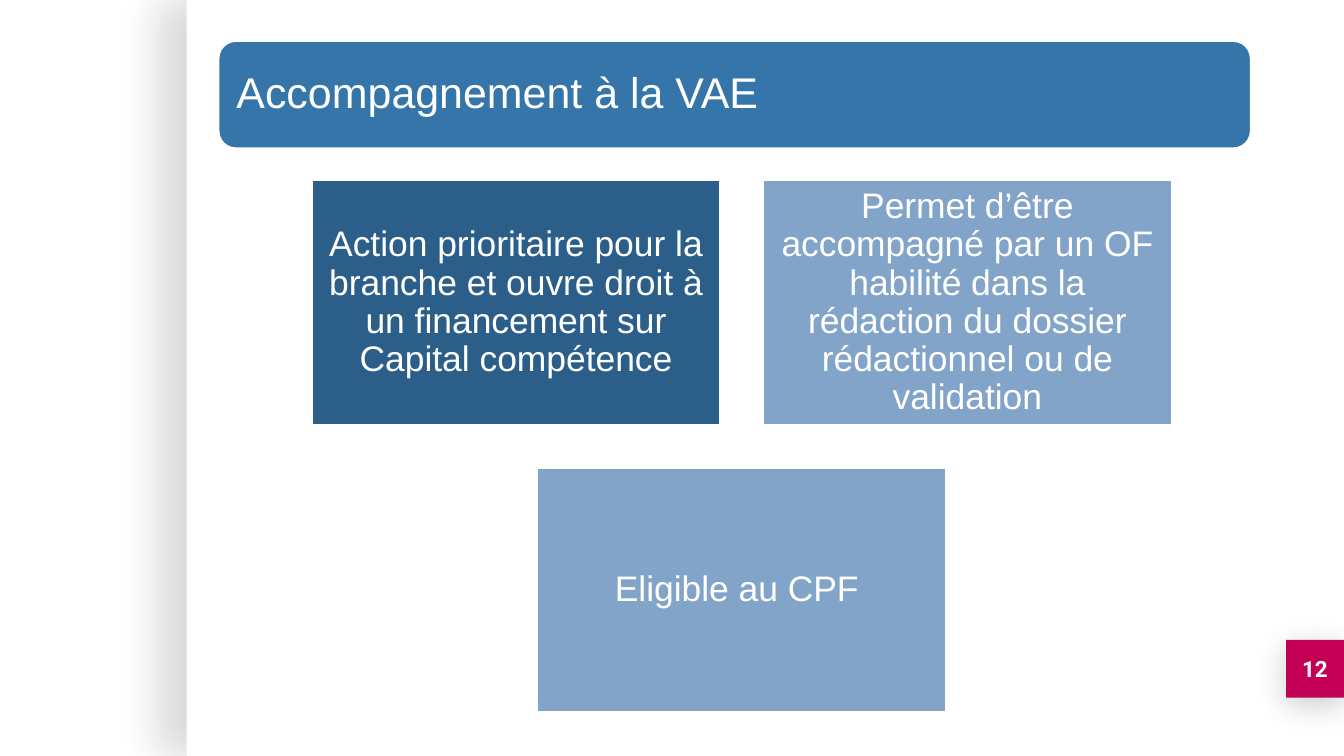
import pptx
import pptx.util
import pptx.dml.color
import pptx.enum.shapes
import pptx.enum.text
import pptx.oxml
import pptx.oxml.ns
from dataclasses import dataclass

Pt = pptx.util.Pt
Kind = pptx.enum.shapes.MSO_SHAPE
Align = pptx.enum.text.PP_ALIGN


@dataclass(frozen=True)
class Theme:
    """Colours, fonts and type sizes of the slide."""
    white: str = "FFFFFF"
    black: str = "000000"
    blue: str = "3575A9"
    dark: str = "2B5F8A"
    light: str = "83A4C9"
    pink: str = "C40056"
    sans: str = "Arial"
    digit: str = "Roboto"
    head: int = 23
    body: int = 19
    small: int = 12


THEME = Theme()
TILES = [
    ("Action prioritaire pour la branche et ouvre droit à un financement "
     "sur Capital compétence", THEME.dark),
    ("Permet d’être accompagné par un OF habilité dans la rédaction du "
     "dossier rédactionnel ou de validation", THEME.light),
    ("Eligible au CPF ", THEME.light),
]


def tint(code):
    """Return the colour object for a hex code."""
    return pptx.dml.color.RGBColor.from_string(code)


def block(slide, kind, box, fill, edge=None):
    """Draw a filled shape, with an optional edge colour."""
    shape = slide.shapes.add_shape(kind, *map(Pt, box))
    shape.shadow.inherit = False
    shape.fill.solid()
    shape.fill.fore_color.rgb = tint(fill)
    if edge:
        shape.line.color.rgb = tint(edge)
        shape.line.width = Pt(2)
    else:
        shape.line.fill.background()
    return shape


def shade(shape, blur, dist, angle, alpha):
    """Give a shape a soft outer shadow."""
    xml = (
        f'<a:outerShdw {pptx.oxml.ns.nsdecls("a")} blurRad="{Pt(blur)}" '
        f'dist="{Pt(dist)}" dir="{angle * 60000}" algn="ctr" '
        f'rotWithShape="0"><a:srgbClr val="{THEME.black}">'
        f'<a:alpha val="{alpha * 1000}"/></a:srgbClr></a:outerShdw>'
    )
    list_tag = pptx.oxml.ns.qn("a:effectLst")
    shape.element.spPr.find(list_tag).append(pptx.oxml.parse_xml(xml))


def write(shape, text, size, inset, align=Align.CENTER, font=THEME.sans,
          bold=False, pitch=0.9):
    """Set white text, centred in height, inside a shape."""
    frame = shape.text_frame
    frame.text = text
    frame.word_wrap = True
    frame.auto_size = pptx.enum.text.MSO_AUTO_SIZE.NONE
    frame.vertical_anchor = pptx.enum.text.MSO_ANCHOR.MIDDLE
    frame.margin_left = frame.margin_right = Pt(inset)
    frame.margin_top = frame.margin_bottom = Pt(inset)
    para = frame.paragraphs[0]
    para.alignment = align
    para.line_spacing = pitch
    run = para.runs[0].font
    run.name, run.size, run.bold = font, Pt(size), bold
    run.color.rgb = tint(THEME.white)


def panel(slide, box):
    """Draw the white page panel with its shadow on the left."""
    shape = block(slide, Kind.RECTANGLE, box, THEME.white)
    shade(shape, blur=22.5, dist=15, angle=180, alpha=15)


def badge(slide, box, text):
    """Draw the page number badge."""
    shape = block(slide, Kind.RECTANGLE, box, THEME.pink)
    shade(shape, blur=16.9, dist=3.8, angle=90, alpha=20)
    write(shape, text, THEME.small, 0, font=THEME.digit, bold=True, pitch=1)


def banner(slide, box, text):
    """Draw the round banner and lay the title over it."""
    left, top, width, height = box
    block(slide, Kind.ROUNDED_RECTANGLE, box, THEME.blue, THEME.white)
    pad = 2.85
    title = slide.shapes.title
    title.left, title.top = Pt(left + pad), Pt(top + pad)
    title.width, title.height = Pt(width - 2 * pad), Pt(height - 2 * pad)
    write(title, text, THEME.head, 7.2, Align.LEFT)
    slide.shapes.element.append(title.element)


def tiles(slide, box, items, cols=2):
    """Lay tiles out in rows, each row centred in the box."""
    left, top, width, _ = box
    wide = width / (cols + 0.1 * (cols - 1))
    high, gap = 0.6 * wide, 0.1 * wide
    for start in range(0, len(items), cols):
        row = items[start:start + cols]
        span = len(row) * (wide + gap) - gap
        edge = left + (width - span) / 2
        y = top + start // cols * (high + gap)
        for i, (text, fill) in enumerate(row):
            spot = (edge + i * (wide + gap), y, wide, high)
            shape = block(slide, Kind.RECTANGLE, spot, fill, THEME.white)
            write(shape, text, THEME.body, 5.8)


def main():
    """Build the slide and save it."""
    deck = pptx.Presentation()
    deck.slide_width, deck.slide_height = Pt(720), Pt(405)
    slide = deck.slides.add_slide(deck.slide_layouts[5])
    panel(slide, (100, 0, 620, 405))
    badge(slide, (689, 342.8, 31, 31), "12")
    banner(slide, (116.6, 21.5, 554, 58.5), "Accompagnement à la VAE")
    tiles(slide, (166.6, 96.2, 461.6, 286), TILES)
    deck.save("out.pptx")


if __name__ == "__main__":
    main()
